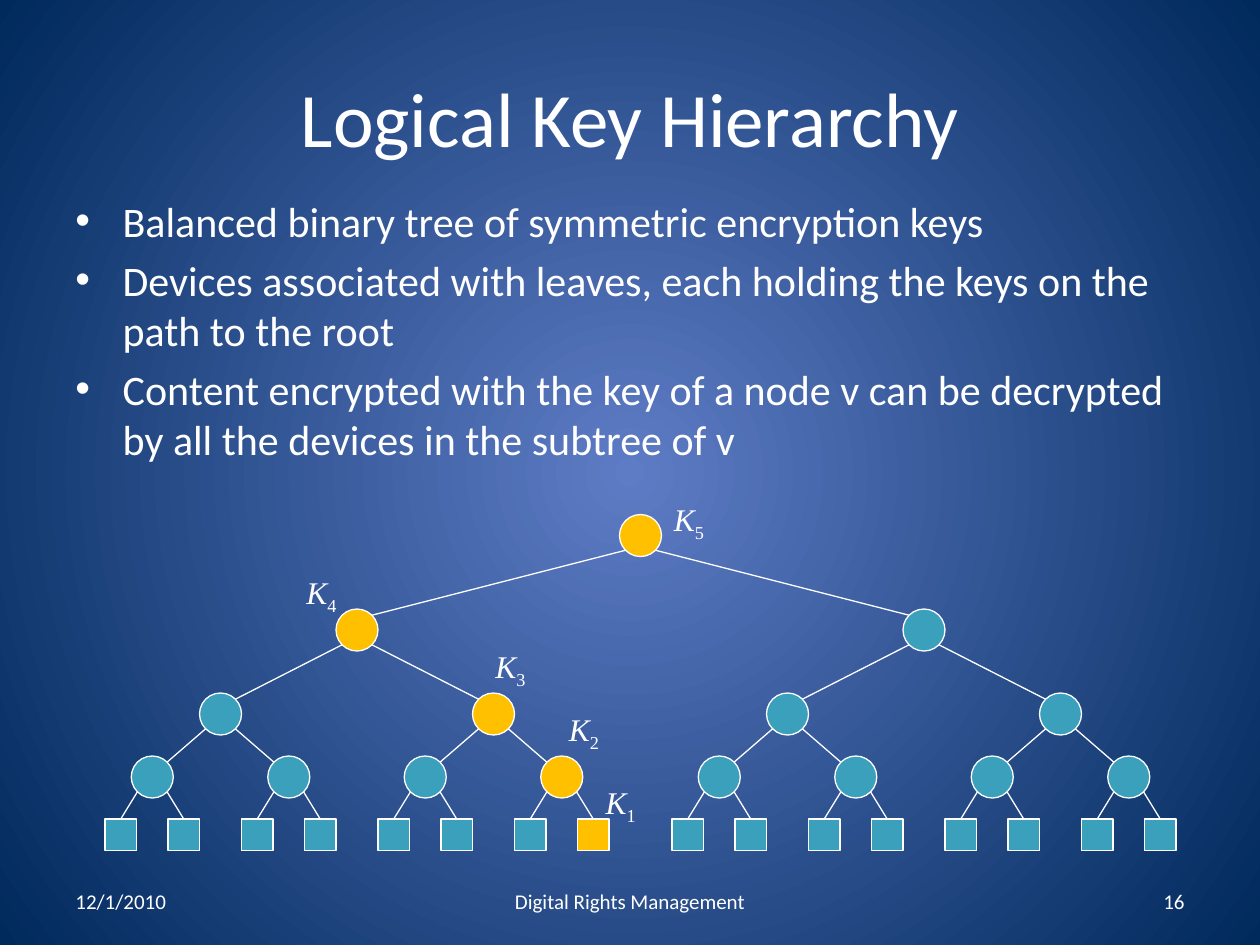
from lxml.etree import SubElement as Sub
from pptx import Presentation
from pptx.dml.color import RGBColor as RGB
from pptx.enum.shapes import MSO_CONNECTOR as Link, MSO_SHAPE as Kind
from pptx.enum.text import MSO_ANCHOR as Anchor, MSO_AUTO_SIZE as Fit, PP_ALIGN as Align
from pptx.oxml.ns import qn
from pptx.util import Pt

PX = 7620  # EMU per px, 120 px to the inch
WHITE = RGB(0xFF, 0xFF, 0xFF)
GOLD = RGB(0xFF, 0xC0, 0x00)
TEAL = RGB(0x3B, 0xA0, 0xBB)
INNER = RGB(0x5E, 0x7C, 0xC5)
OUTER = RGB(0x00, 0x29, 0x5C)

BULLETS = [
    "Balanced binary tree of symmetric encryption keys",
    "Devices associated with leaves, each holding the keys on the path to the root",
    "Content encrypted with the key of a node v can be decrypted "
    "by all the devices in the subtree of v",
]
ROWS = [20, 110, 190, 250, 305]  # node centres below the tree's top
SPREAD = [270, 130, 65, 30]  # sideways step from a node to its children
LEAF = len(SPREAD)
MARKED = 7  # leaf whose path to the root is highlighted
KEYS = [("1", 465, 250), ("2", 430, 180), ("3", 360, 120), ("4", 180, 50), ("5", 530, -20)]


def emu(*nums):
    return [round(n * PX) for n in nums]


def backdrop(slide):
    """Radial gradient from the middle of the slide."""
    fill = slide.background.fill
    fill.gradient()
    for stop, color, pos in zip(fill.gradient_stops, (INNER, OUTER), (0, 1)):
        stop.color.rgb = color
        stop.position = pos
    lin = next(slide.element.iter(qn("a:lin")))
    grad = lin.getparent()
    grad.remove(lin)
    way = Sub(grad, qn("a:path"), {"path": "circle"})
    Sub(way, qn("a:fillToRect"), dict.fromkeys("ltrb", "50000"))


def text(slide, box, lines, size, align=Align.LEFT, anchor=Anchor.MIDDLE):
    frame = slide.shapes.add_textbox(*emu(*box)).text_frame
    frame.word_wrap = True
    frame.vertical_anchor = anchor
    frame.text = "\n".join(lines)
    for para in frame.paragraphs:
        para.alignment = align
        style(para.font, size, "Calibri")
    return frame


def style(font, size, name):
    font.size = Pt(size)
    font.name = name
    font.color.rgb = WHITE


def body(slide, box):
    frame = text(slide, box, BULLETS, 24, anchor=Anchor.TOP)
    for para in frame.paragraphs:
        para.space_before = Pt(4.8)
        props = para._p.get_or_add_pPr()
        props.set("marL", str(45 * PX))
        props.set("indent", str(-45 * PX))
        Sub(props, qn("a:buFont"), {"typeface": "Arial"})
        Sub(props, qn("a:buChar"), {"char": "•"})


def footer(slide, box):
    left, top, width, height = box
    side, mid = 280, 380
    text(slide, (left, top, side, height), ["12/1/2010"], 12)
    text(slide, (left + (width - mid) / 2, top, mid, height),
         ["Digital Rights Management"], 12, Align.CENTER)
    text(slide, (left + width - side, top, side, height), ["16"], 12, Align.RIGHT)


def node(slide, x, y, leaf, color):
    size = 30 if leaf else 40
    shape = slide.shapes.add_shape(
        Kind.RECTANGLE if leaf else Kind.OVAL,
        *emu(x - size / 2, y - size / 2, size, size))
    shape.shadow.inherit = False
    shape.fill.solid()
    shape.fill.fore_color.rgb = color
    shape.line.color.rgb = WHITE
    shape.line.width = Pt(0.75)
    return shape


def edge(slide, start, end):
    line = slide.shapes.add_connector(Link.STRAIGHT, *emu(*start, *end))
    line.line.color.rgb = WHITE
    line.line.width = Pt(0.75)
    Sub(line._element.spPr, qn("a:effectLst"))
    return line


def branch(slide, x, top, depth=0, index=0):
    """Draw a node and all below it; return the node."""
    y = top + ROWS[depth]
    leaf = depth == LEAF
    color = GOLD if index == MARKED >> (LEAF - depth) else TEAL
    shape = node(slide, x, y, leaf, color)
    if leaf:
        return shape
    for side in (-1, 1):
        kid_x = x + side * SPREAD[depth]
        kid_y = top + ROWS[depth + 1]
        kid = branch(slide, kid_x, top, depth + 1, 2 * index + (side > 0))
        line = edge(slide, (x + side * 14, y + 14), (kid_x - side * 14, kid_y - 14))
        if depth + 1 == LEAF:
            line.end_connect(kid, 0)
    return shape


def label(slide, x, y, digit):
    frame = slide.shapes.add_textbox(*emu(x, y, 54, 48)).text_frame
    frame.word_wrap = False
    frame.auto_size = Fit.SHAPE_TO_FIT_TEXT
    para = frame.paragraphs[0]
    style(para.font, 18, "Times New Roman")
    for part in ("K", digit):
        run = para.add_run()
        run.text = part
        run.font.italic = part == "K"
    run.font._element.set("baseline", "-25000")


def tree(slide, box):
    left, top, width, _ = box
    branch(slide, left + width / 2, top)
    for digit, x, y in KEYS:
        label(slide, left + x, top + y, digit)


def main():
    deck = Presentation()
    deck.slide_width, deck.slide_height = emu(1200, 900)
    slide = deck.slides.add_slide(deck.slide_layouts[6])
    backdrop(slide)
    text(slide, (60, 36, 1080, 150), ["Logical Key Hierarchy"], 44, Align.CENTER)
    body(slide, (60, 180, 1100, 340))
    footer(slide, (60, 834, 1080, 48))
    tree(slide, (100, 490, 1020, 320))
    deck.save("out.pptx")


if __name__ == "__main__":
    main()
